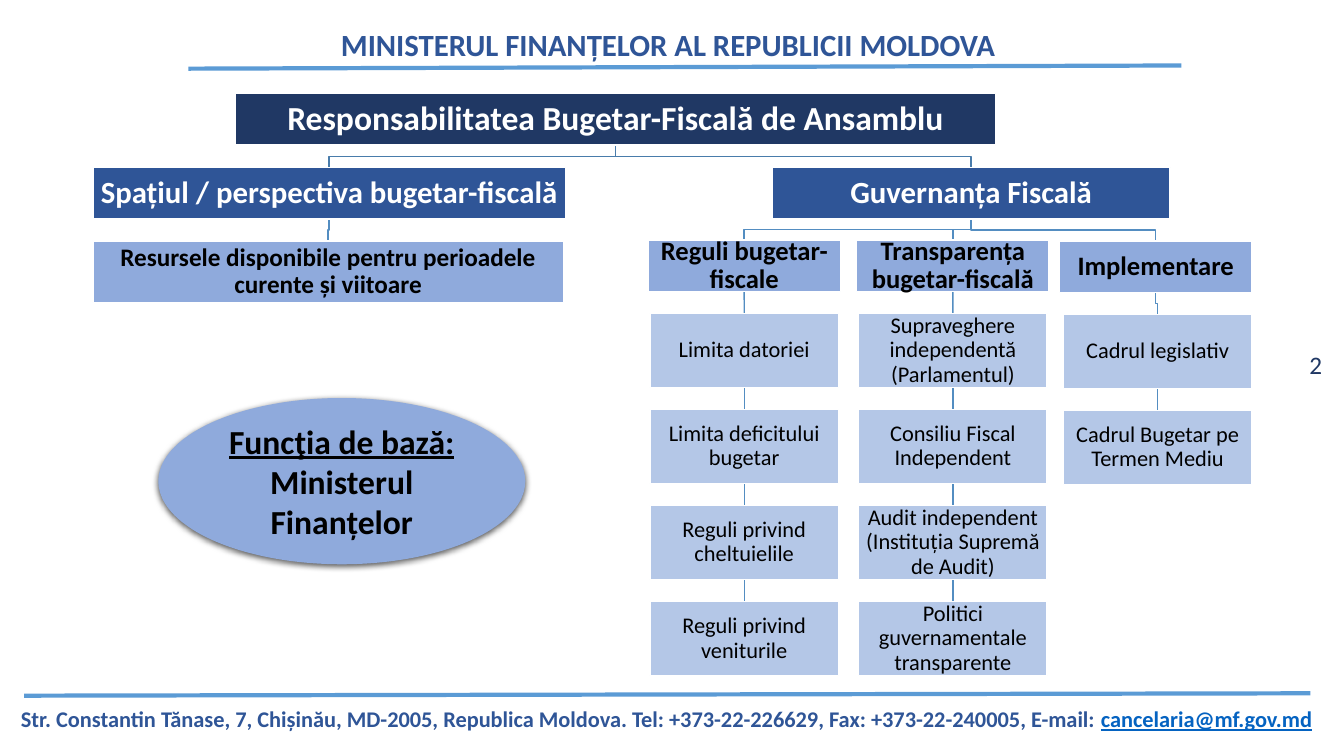
from collections import namedtuple

from lxml.etree import SubElement
from pptx import Presentation
from pptx.dml.color import RGBColor
from pptx.enum.shapes import MSO_CONNECTOR, MSO_SHAPE
from pptx.enum.text import MSO_ANCHOR, MSO_AUTO_SIZE, PP_ALIGN
from pptx.oxml.ns import qn
from pptx.util import Cm, Pt

FONT = "Calibri"
NAVY = RGBColor(0x20, 0x38, 0x64)
BLUE = RGBColor(0x2F, 0x55, 0x97)
MID_BLUE = RGBColor(0x8F, 0xAA, 0xDC)
PALE_BLUE = RGBColor(0xB4, 0xC7, 0xE7)
RULE_BLUE = RGBColor(0x5B, 0x9B, 0xD5)
TRUNK_BLUE = RGBColor(0x49, 0x7C, 0xAB)
BRANCH_BLUE = RGBColor(0x53, 0x8D, 0xC1)
LINK_BLUE = RGBColor(0x05, 0x63, 0xC1)
WHITE = RGBColor(0xFF, 0xFF, 0xFF)
BLACK = RGBColor(0, 0, 0)

Box = namedtuple("Box", "left top width height")  # centimetres
Level = namedtuple("Level", "fill color size bold inset")

ROOT = Level(NAVY, WHITE, 24, True, 0.05)
PILLAR = Level(BLUE, WHITE, 22, True, 0.05)
RESOURCE = Level(MID_BLUE, BLACK, 18, True, 0.03)
HEADING = Level(MID_BLUE, BLACK, 19, True, 0.03)
ITEM = Level(PALE_BLUE, BLACK, 16, False, 0.03)

BAR_HEIGHT = 1.3
HEADING_WIDTH = 4.85
ITEM_WIDTH, ITEM_HEIGHT = 4.75, 1.87
ITEM_OFFSET, ITEM_PITCH = 1.85, 2.42

# heading, left, top, indent of the items, items
COLUMNS = [
    ("Reguli bugetar-fiscale", 13.99, 3.69, 0.05,
     ["Limita datoriei", "Limita deficitului bugetar",
      "Reguli privind cheltuielile", "Reguli privind veniturile"]),
    ("Transparența bugetar-fiscală", 19.25, 3.69, 0.05,
     ["Supraveghere independentă (Parlamentul)", "Consiliu Fiscal Independent",
      "Audit independent (Instituția Supremă de Audit)",
      "Politici guvernamentale transparente"]),
    ("Implementare", 24.36, 3.71, 0.1,
     ["Cadrul legislativ", "Cadrul Bugetar pe Termen Mediu"]),
]


def to_lengths(box):
    return [Cm(value) for value in box]


def format_text(shape, size, color, bold=False, line_spacing=1.0,
                anchor=MSO_ANCHOR.MIDDLE):
    frame = shape.text_frame
    frame.word_wrap = True
    frame.auto_size = MSO_AUTO_SIZE.NONE
    frame.vertical_anchor = anchor
    paragraph = frame.paragraphs[0]
    paragraph.alignment = PP_ALIGN.CENTER
    paragraph.line_spacing = line_spacing
    for run in paragraph.runs:
        run.font.name = FONT
        run.font.size = Pt(size)
        run.font.bold = bold
        run.font.color.rgb = color


def add_line(slide, start, end, color, width):
    line = slide.shapes.add_connector(
        MSO_CONNECTOR.STRAIGHT, *to_lengths(start), *to_lengths(end))
    line.line.color.rgb = color
    line.line.width = Pt(width)
    SubElement(line.element.spPr, qn("a:effectLst"))
    return line


def add_header(slide, box):
    title = slide.shapes.title
    title.left, title.top, title.width, title.height = to_lengths(box)
    title.text_frame.text = "MINISTERUL FINANȚELOR AL REPUBLICII MOLDOVA"
    format_text(title, 22, BLUE, True, 1.15, MSO_ANCHOR.TOP)
    add_line(slide, (box.left + 0.23, box.top + 1.35),
             (box.left + 25.25, box.top + 1.27), RULE_BLUE, 3)


def add_footer(slide, box):
    add_line(slide, (box.left + 0.61, box.top - 0.02),
             (box.left + 33.02, box.top - 0.08), RULE_BLUE, 3)
    address = slide.shapes.add_textbox(*to_lengths(box))
    paragraph = address.text_frame.paragraphs[0]
    paragraph.add_run().text = (
        "Str. Constantin Tănase, 7, Chișinău, MD-2005, Republica Moldova. "
        "Tel: +373-22-226629, Fax: +373-22-240005, E-mail: ")
    email = paragraph.add_run()
    email.text = "cancelaria@mf.gov.md"
    format_text(address, 16, BLUE, True, 1.15, MSO_ANCHOR.TOP)
    email.font.color.rgb = LINK_BLUE
    email.font.underline = True


def add_page_number(slide, box):
    number = slide.shapes.add_textbox(*to_lengths(box))
    number.text_frame.text = "2"
    format_text(number, 18, NAVY)


def add_node(slide, box, text, level):
    node = slide.shapes.add_shape(MSO_SHAPE.RECTANGLE, *to_lengths(box))
    node.shadow.inherit = False
    node.fill.solid()
    node.fill.fore_color.rgb = level.fill
    node.line.color.rgb = WHITE
    node.line.width = Pt(1)
    frame = node.text_frame
    frame.text = text
    frame.margin_left = frame.margin_right = Cm(level.inset)
    frame.margin_top = frame.margin_bottom = Cm(level.inset)
    format_text(node, level.size, level.color, level.bold, 0.9)
    return node


def link_nodes(slide, parent, child, color=BRANCH_BLUE):
    """Join parent bottom to child top, with a bend when they are not aligned."""
    start_x, start_y = parent.left + parent.width // 2, parent.top + parent.height
    end_x, end_y = child.left + child.width // 2, child.top
    if abs(start_x - end_x) < Cm(0.01):
        link = add_line(slide, (0, 0), (1, 1), color, 1)
        link.begin_connect(parent, 2)
        link.end_connect(child, 0)
    else:
        middle_y = (start_y + end_y) // 2
        builder = slide.shapes.build_freeform(start_x, start_y)
        builder.add_line_segments(
            [(start_x, middle_y), (end_x, middle_y), (end_x, end_y)], close=False)
        link = builder.convert_to_shape()
        link.shadow.inherit = False
        link.fill.background()
        link.line.color.rgb = color
        link.line.width = Pt(1)
    link.element.getparent().insert(2, link.element)  # behind the nodes


def add_column(slide, box, pillar, heading, indent, items):
    parent = add_node(slide, Box(box.left, box.top, box.width, BAR_HEIGHT),
                      heading, HEADING)
    link_nodes(slide, pillar, parent)
    for row, text in enumerate(items):
        top = box.top + ITEM_OFFSET + row * ITEM_PITCH
        child = add_node(
            slide, Box(box.left + indent, top, ITEM_WIDTH, ITEM_HEIGHT), text, ITEM)
        link_nodes(slide, parent, child)
        parent = child


def add_responsibility_tree(slide, box):
    def place(left, top, width, height=BAR_HEIGHT):
        return Box(box.left + left, box.top + top, width, height)

    root = add_node(slide, place(3.6, 0, 19.15),
                    "Responsabilitatea Bugetar-Fiscală de Ansamblu", ROOT)
    space = add_node(slide, place(0, 1.86, 11.91),
                     "Spațiul / perspectiva bugetar-fiscală", PILLAR)
    governance = add_node(slide, place(17.12, 1.86, 10.03),
                          "Guvernanța Fiscală", PILLAR)
    resources = add_node(
        slide, place(0, 3.71, 11.86, 1.55),
        "Resursele disponibile pentru perioadele curente și viitoare", RESOURCE)
    link_nodes(slide, root, space, TRUNK_BLUE)
    link_nodes(slide, root, governance, TRUNK_BLUE)
    link_nodes(slide, space, resources)
    for heading, left, top, indent, items in COLUMNS:
        add_column(slide, place(left, top, HEADING_WIDTH, box.height - top),
                   governance, heading, indent, items)


def add_core_function(slide, box):
    ellipse = slide.shapes.add_shape(MSO_SHAPE.OVAL, *to_lengths(box))
    ellipse.fill.solid()
    ellipse.fill.fore_color.rgb = MID_BLUE
    ellipse.line.fill.background()
    paragraph = ellipse.text_frame.paragraphs[0]
    label = paragraph.add_run()
    label.text = "Funcţia de bază:"
    paragraph.add_run().text = " Ministerul Finanțelor"
    format_text(ellipse, 24, BLACK, True)
    label.font.underline = True
    effects = SubElement(ellipse.element.spPr, qn("a:effectLst"))
    shadow = SubElement(effects, qn("a:outerShdw"), blurRad=str(Pt(4.5)),
                        dist=str(Pt(1.5)), dir="5400000", rotWithShape="0")
    shadow_color = SubElement(shadow, qn("a:srgbClr"), val="000000")
    SubElement(shadow_color, qn("a:alpha"), val="63000")


def main():
    presentation = Presentation()
    presentation.slide_width, presentation.slide_height = Cm(33.87), Cm(19.05)
    slide = presentation.slides.add_slide(presentation.slide_layouts[5])
    add_header(slide, Box(4.52, 0.38, 24.64, 1.27))
    add_footer(slide, Box(0, 17.55, 33.6, 0.99))
    add_page_number(slide, Box(32.51, 8.53, 1.3, 1.3))
    add_responsibility_tree(slide, Box(2.34, 2.36, 29.21, 14.69))
    add_core_function(slide, Box(3.99, 10.03, 9.25, 4.19))
    presentation.save("out.pptx")


if __name__ == "__main__":
    main()
